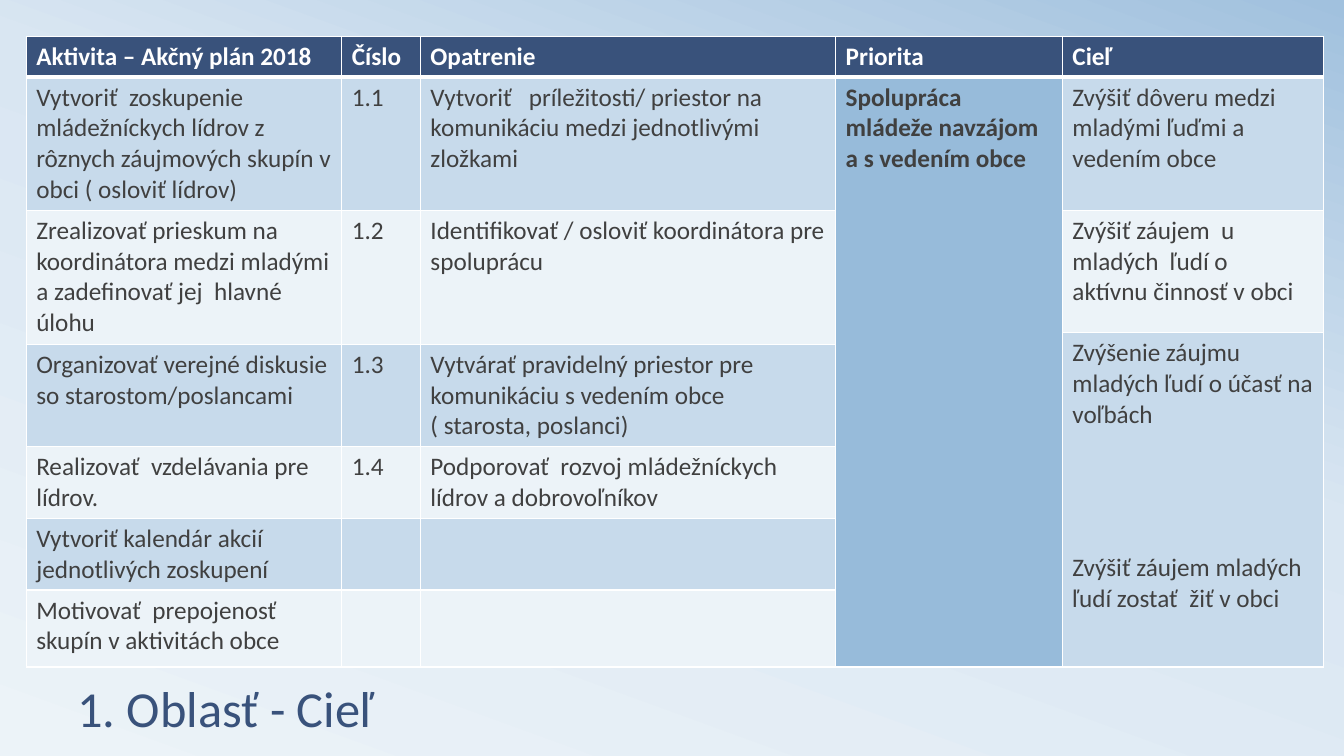
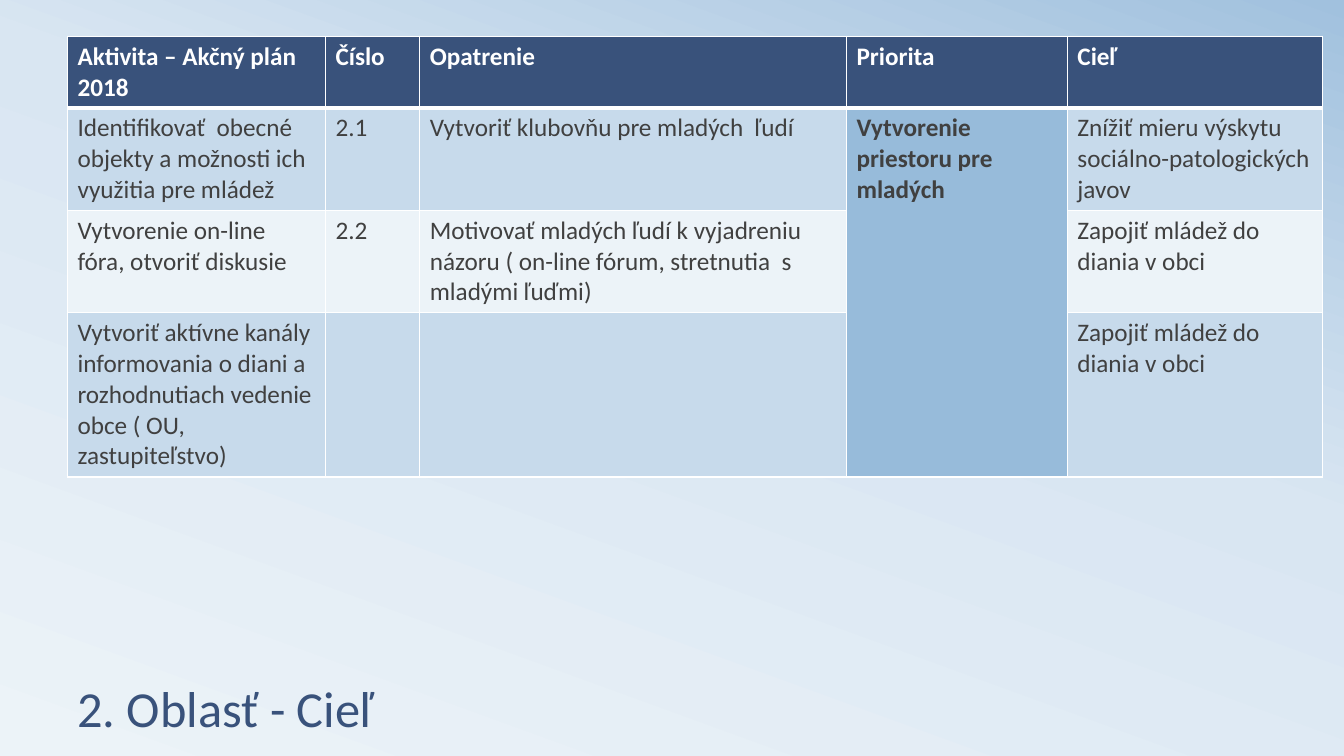
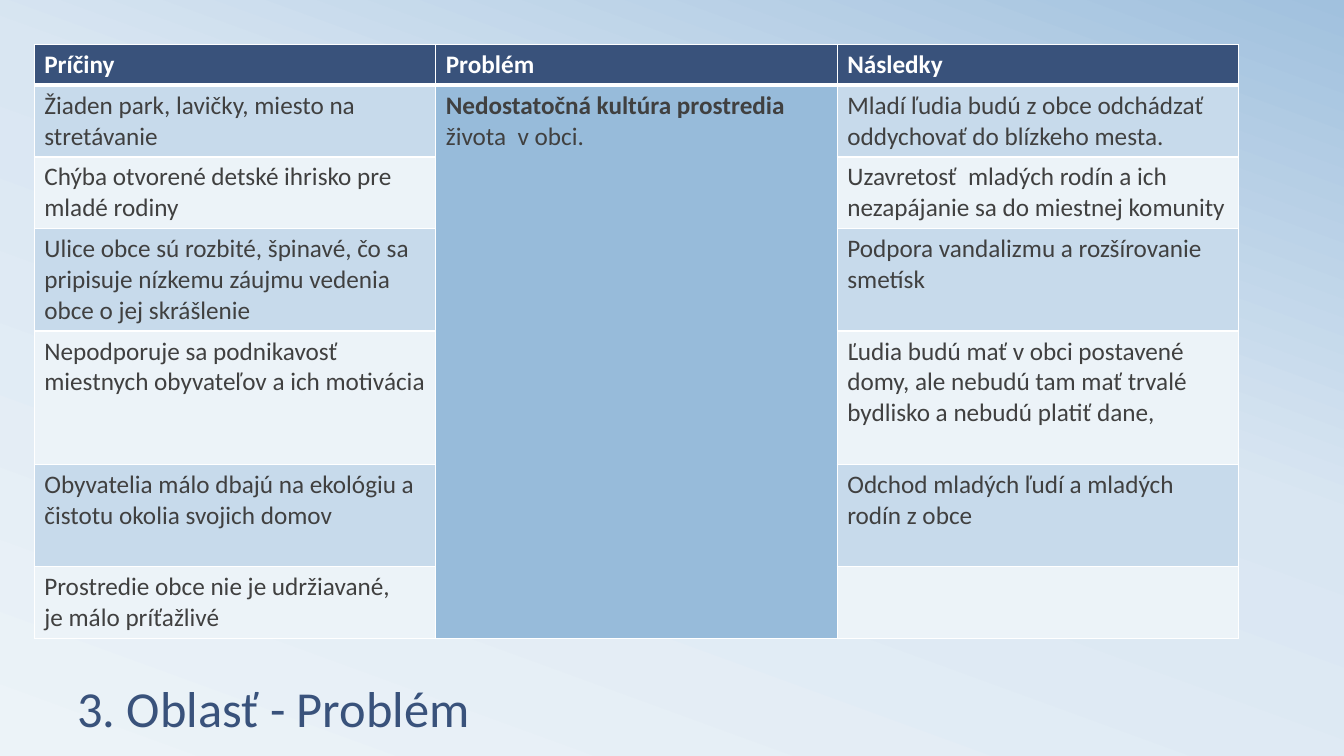
from copy import deepcopy
from dataclasses import dataclass

from pptx import Presentation
from pptx.dml.color import RGBColor
from pptx.enum.text import MSO_ANCHOR
from pptx.oxml.ns import qn
from pptx.util import Pt
from lxml import etree

BOTTOM = MSO_ANCHOR.BOTTOM


@dataclass(frozen=True)
class Theme:
    font: str = "Calibri"
    title_size: float = 36
    body_size: float = 18
    navy: str = "39527B"
    white: str = "FFFFFF"
    ink: str = "404040"
    key: str = "97BBDA"
    bands: tuple = ("C7DAEB", "ECF3F8")
    backdrop: tuple = ((0, "ECF3F8"), (0.58, "D9E6F2"), (1, "A1C1DE"))
    thin: float = 1
    thick: float = 3


THEME = Theme()

# Content: None continues the cell above, a tuple is a key cell
# whose first part is bold, and a line break starts a new paragraph.
PLAN_HEADER = ("Aktivita – Akčný plán 2018", "Číslo", "Opatrenie", "Priorita", "Cieľ")

PAGES = [
    {
        "title": "1. Oblasť - Cieľ",
        "corner": (18.7, 25.9),
        "widths": (225.4, 56.2, 296.6, 162, 186.5),
        "heights": (29.2, 95.2, 87.2, 8.4, 73.2, 51.2, 51.2, 55),
        "gaps": {(3, 4): 88},
        "rows": [
            PLAN_HEADER,
            ("Vytvoriť  zoskupenie mládežníckych lídrov z rôznych záujmových skupín "
             "v obci ( osloviť lídrov)",
             "1.1",
             "Vytvoriť   príležitosti/ priestor na komunikáciu medzi jednotlivými zložkami",
             ("Spolupráca mládeže navzájom a s vedením obce",),
             "Zvýšiť dôveru medzi mladými ľuďmi a vedením obce"),
            ("Zrealizovať prieskum na koordinátora medzi mladými a zadefinovať jej  "
             "hlavné úlohu",
             "1.2",
             "Identifikovať / osloviť koordinátora pre spoluprácu",
             None,
             "Zvýšiť záujem  u mladých  ľudí o  aktívnu činnosť v obci"),
            (None, None, None, None,
             "Zvýšenie záujmu mladých ľudí o účasť na voľbách\n"
             "Zvýšiť záujem mladých ľudí zostať  žiť v obci"),
            ("Organizovať verejné diskusie so starostom/poslancami",
             "1.3",
             "Vytvárať pravidelný priestor pre komunikáciu s vedením obce\n"
             "( starosta, poslanci)",
             None, None),
            ("Realizovať  vzdelávania pre lídrov.",
             "1.4",
             "Podporovať  rozvoj mládežníckych lídrov a dobrovoľníkov",
             None, None),
            ("Vytvoriť kalendár akcií jednotlivých zoskupení", "", "", None, None),
            ("Motivovať  prepojenosť  skupín v aktivitách obce", "", "", None, None),
        ],
    },
    {
        "title": "2. Oblasť - Cieľ",
        "corner": (48.2, 25.9),
        "widths": (184.3, 67.4, 304.8, 157.8, 182.4),
        "heights": (51.2, 73.2, 73.2, 117.2),
        "gaps": {},
        "rows": [
            PLAN_HEADER,
            ("Identifikovať  obecné objekty a možnosti ich využitia pre mládež",
             "2.1",
             "Vytvoriť klubovňu pre mladých  ľudí",
             ("Vytvorenie priestoru pre mladých",),
             "Znížiť mieru výskytu sociálno-patologických javov"),
            ("Vytvorenie on-line fóra, otvoriť diskusie",
             "2.2",
             "Motivovať mladých ľudí k vyjadreniu názoru ( on-line fórum, stretnutia  s "
             "mladými ľuďmi)",
             None,
             "Zapojiť mládež do diania v obci"),
            ("Vytvoriť aktívne kanály informovania o diani a rozhodnutiach vedenie obce "
             "( OU, zastupiteľstvo)",
             "", "", None,
             "Zapojiť mládež do diania v obci"),
        ],
    },
    {
        "title": "3. Oblasť - Problém",
        "corner": (24.5, 31.7),
        "widths": (286.8,) * 3,
        "heights": (29.2, 51.2, 51.2, 73.2, 95.2, 73.2, 51.2),
        "gaps": {},
        "rows": [
            ("Príčiny", "Problém", "Následky"),
            ("Žiaden park, lavičky, miesto na stretávanie",
             ("Nedostatočná kultúra prostredia ", "života  v obci."),
             "Mladí ľudia budú z obce odchádzať oddychovať do blízkeho mesta."),
            ("Chýba otvorené detské ihrisko pre mladé rodiny",
             None,
             "Uzavretosť  mladých rodín a ich nezapájanie sa do miestnej komunity"),
            ("Ulice obce sú rozbité, špinavé, čo sa pripisuje nízkemu záujmu vedenia "
             "obce o jej skrášlenie",
             None,
             "Podpora vandalizmu a rozšírovanie smetísk"),
            ("Nepodporuje sa podnikavosť miestnych obyvateľov a ich motivácia",
             None,
             "Ľudia budú mať v obci postavené domy, ale nebudú tam mať trvalé bydlisko "
             "a nebudú platiť dane,"),
            ("Obyvatelia málo dbajú na ekológiu a čistotu okolia svojich domov",
             None,
             "Odchod mladých ľudí a mladých rodín z obce"),
            ("Prostredie obce nie je udržiavané,\nje málo príťažlivé", None, ""),
        ],
    },
]


def color(code):
    return RGBColor.from_string(code)


def add_span(para, text, size, ink, bold=False):
    span = para.add_run()
    span.text = text
    span.font.name = THEME.font
    span.font.size = Pt(size)
    span.font.bold = bold
    span.font.color.rgb = color(ink)


def paint_background(master):
    fill = master.background.fill
    fill.gradient()
    fill.gradient_angle = 70
    stops = master.element.find(".//" + qn("a:gsLst"))
    stops.append(deepcopy(stops[0]))
    for stop, (position, code) in zip(fill.gradient_stops, THEME.backdrop):
        stop.position = position
        stop.color.rgb = color(code)


def add_title(page, text):
    box = page.shapes.add_textbox(Pt(48), Pt(445.7), Pt(864), Pt(84.2))
    frame = box.text_frame
    frame.word_wrap = True
    frame.vertical_anchor = BOTTOM
    para = frame.paragraphs[0]
    para.line_spacing = 0.8
    add_span(para, text, THEME.title_size, THEME.navy)


def set_borders(cell, row):
    """White lines all round, thicker between the header and the body."""
    properties = cell._tc.get_or_add_tcPr()
    widths = {"lnL": THEME.thin, "lnR": THEME.thin,
              "lnT": THEME.thick if row == 1 else THEME.thin,
              "lnB": THEME.thick if row == 0 else THEME.thin}
    for tag, width in widths.items():
        line = etree.SubElement(properties, qn("a:" + tag), w=str(Pt(width)))
        fill = etree.SubElement(line, qn("a:solidFill"))
        etree.SubElement(fill, qn("a:srgbClr"), val=THEME.white)


def write_cell(cell, content, header, gap):
    parts = content if isinstance(content, tuple) else (content,)
    ink = THEME.white if header else THEME.ink
    para = cell.text_frame.paragraphs[0]
    for number, part in enumerate(parts):
        bold = header or (parts is content and number == 0)
        for line_number, line in enumerate(part.split("\n")):
            if line_number:
                para = cell.text_frame.add_paragraph()
                para.space_before = Pt(gap)
            if line:
                add_span(para, line, THEME.body_size, ink, bold)


def add_grid(page, data):
    rows, widths, heights = data["rows"], data["widths"], data["heights"]
    left, top = data["corner"]
    table = page.shapes.add_table(len(rows), len(widths), Pt(left), Pt(top),
                                  Pt(sum(widths)), Pt(sum(heights))).table
    for column, width in zip(table.columns, widths):
        column.width = Pt(width)
    for row, height in zip(table.rows, heights):
        row.height = Pt(height)

    for column, contents in enumerate(zip(*rows)):
        starts = [row for row, content in enumerate(contents) if content is not None]
        ends = [start - 1 for start in starts[1:]] + [len(rows) - 1]
        # Bands alternate over the cells that show in each column
        for order, (start, end) in enumerate(zip(starts, ends)):
            content = contents[start]
            if start == 0:
                fill = THEME.navy
            elif isinstance(content, tuple):
                fill = THEME.key
            else:
                fill = THEME.bands[(order - 1) % 2]
            if end > start:
                table.cell(start, column).merge(table.cell(end, column))
            write_cell(table.cell(start, column), content, start == 0,
                       data["gaps"].get((start, column), 0))
            for row in range(start, end + 1):
                cell = table.cell(row, column)
                set_borders(cell, row)
                cell.fill.solid()
                cell.fill.fore_color.rgb = color(fill)


def main():
    deck = Presentation()
    deck.slide_width, deck.slide_height = Pt(960), Pt(540)
    paint_background(deck.slide_master)
    for data in PAGES:
        page = deck.slides.add_slide(deck.slide_layouts[6])
        add_title(page, data["title"])
        add_grid(page, data)
    deck.save("out.pptx")


if __name__ == "__main__":
    main()
